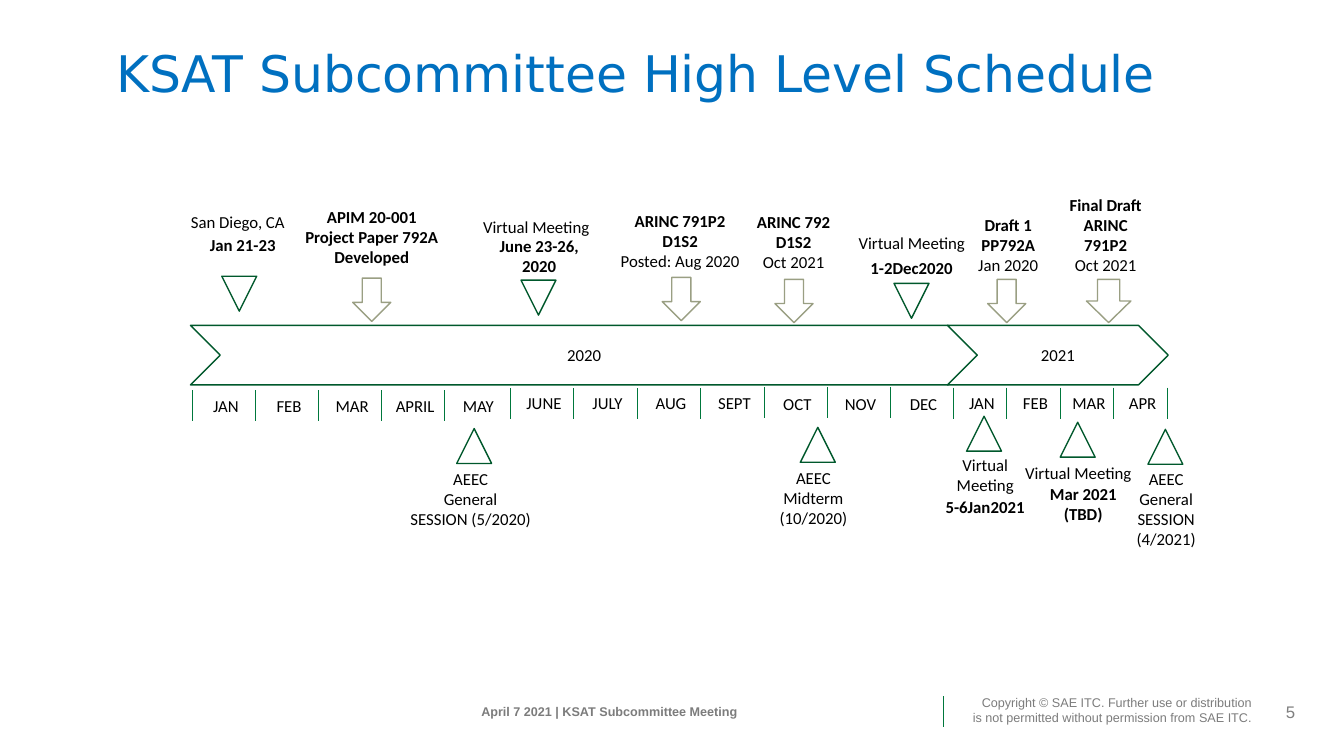
from pptx import Presentation
from pptx.dml.color import RGBColor
from pptx.enum import shapes, text
from pptx.oxml import ns
from pptx.util import Cm, Pt
from lxml import etree

GREEN, OLIVE, GREY = "00582C", "9A9F83", "7C7C7C"
KIND = shapes.MSO_SHAPE
ALIGN = text.PP_ALIGN

BANDS = [
    (4.85, 1.59, 9.83, 9.85, "JAN FEB MAR APRIL MAY"),
    (12.86, 1.6, 9.78, 9.78, "JUNE JULY AUG SEPT"),
    (19.25, 1.59, 9.75, 9.8, "OCT NOV DEC"),
    (24.02, 1.35, 9.77, 9.78, "JAN FEB MAR APR"),
]
LABELS = [
    ("San Diego, CA", 0, 4.14, 5.21, 3.71, 0.76),
    ("Jan 21-23", 1, 4.57, 5.79, 3.1, 0.76),
    ("APIM 20-001\nProject Paper 792A\nDeveloped", 3, 7.01, 5.08, 4.72, 1.8),
    ("Virtual Meeting", 0, 11.66, 5.33, 3.71, 0.76),
    ("June 23-26, 2020", 1, 12.04, 5.82, 3.1, 1.27),
    ("ARINC 791P2\nD1S2\nPosted: Aug 2020", 2, 14.78, 5.18, 4.72, 1.8),
    ("ARINC 792 D1S2\nOct 2021", 1, 18.82, 5.21, 2.36, 1.8),
    ("Virtual Meeting", 0, 21.34, 5.74, 3.28, 0.76),
    ("1-2Dec2020", 1, 21.44, 6.38, 3.07, 0.76),
    ("Draft 1\nPP792A\nJan 2020", 2, 24.33, 5.28, 2.16, 1.8),
    ("Final Draft\nARINC 791P2\nOct 2021", 2, 26.52, 4.78, 2.69, 2.31),
    ("AEEC\nGeneral\nSESSION (5/2020)", 0, 9.83, 11.68, 4.06, 1.8),
    ("AEEC\nMidterm\n(10/2020)", 0, 18.47, 11.66, 4.06, 1.8),
    ("Virtual\nMeeting", 0, 23.19, 11.33, 3.28, 1.75),
    ("5-6Jan2021", 1, 23.29, 12.4, 3.07, 1.07),
    ("Virtual Meeting", 0, 25.32, 11.53, 3.71, 0.76),
    ("Mar 2021\n(TBD)", 2, 25.88, 12.07, 2.84, 1.8),
    ("AEEC\nGeneral\nSESSION\n(4/2021)", 0, 27.36, 11.68, 4.06, 2.31),
]
PAST = [(5.59, 6.96), (13.13, 7.06), (22.53, 7.14)]
NEXT = [(11.51, 10.8), (20.17, 10.77), (24.36, 10.49),
        (26.72, 10.64), (28.93, 10.82)]
DRAFTS = [(8.89, 7.01, 0.96), (16.69, 6.99, 0.96), (19.53, 7.04, 0.96),
          (24.89, 7.04, 0.96), (27.38, 7.04, 1.12)]


def paint(item, color):
    """Set the colour of a font, fill or line colour format."""
    item.rgb = RGBColor.from_string(color)


def style(frame, words, font="Calibri", size=12, color="000000", bold=0,
          align=ALIGN.CENTER):
    """Fill a text frame, with its first paragraphs bold."""
    frame.text = words
    for n, para in enumerate(frame.paragraphs):
        para.alignment = align
        for run in para.runs:
            run.font.name = font
            run.font.size = Pt(size)
            run.font.bold = n < bold
            paint(run.font.color, color)


def label(slide, words, bold, x, y, w, h, inset=True, wrap=True, **look):
    """Add a text box and return its frame."""
    frame = slide.shapes.add_textbox(Cm(x), Cm(y), Cm(w), Cm(h)).text_frame
    frame.word_wrap = wrap
    if not inset:
        frame.margin_left = frame.margin_right = 0
        frame.margin_top = frame.margin_bottom = 0
    style(frame, words, bold=bold, **look)
    return frame


def mark(slide, kind, x, y, w, h, color=GREEN, turn=0):
    """Add an unfilled, outlined shape."""
    shape = slide.shapes.add_shape(kind, Cm(x), Cm(y), Cm(w), Cm(h))
    shape.shadow.inherit = False
    shape.fill.background()
    paint(shape.line.color, color)
    shape.line.width = Pt(1)
    shape.rotation = turn
    return shape


def year(slide, name, x, w):
    """Add a chevron that spans one year."""
    shape = mark(slide, KIND.CHEVRON, x, 8.2, w, 1.5)
    shape.fill.solid()
    paint(shape.fill.fore_color, "FFFFFF")
    style(shape.text_frame, name)
    shape.text_frame.vertical_anchor = text.MSO_ANCHOR.MIDDLE


def tick(slide, x, y):
    """Add a short upright line."""
    line = slide.shapes.add_connector(
        shapes.MSO_CONNECTOR.STRAIGHT, Cm(x), Cm(y), Cm(x), Cm(y + 0.78))
    paint(line.line.color, "00773C")
    line.line.width = Pt(0.5)
    etree.SubElement(line._element.spPr, ns.qn("a:effectLst"))


def months(slide, start, step, top, base, names):
    """Add a run of month names, each with a tick on its left."""
    for n, name in enumerate(names.split()):
        x = start + n * step
        tick(slide, x, top)
        label(slide, name, 0, x, base, step + 0.1, 0.76)


def footer(slide):
    """Add the date, copyright and page number."""
    look = dict(inset=False, font="Arial")
    label(slide, "April 7 2021 | KSAT Subcommittee Meeting", 1,
          10.21, 17.75, 10.29, 0.38, size=9, color=GREY, **look)
    tick(slide, 23.77, 17.55)
    label(slide, "Copyright © SAE ITC. Further use or distribution\v"
          "is not permitted without permission from SAE ITC.", 0,
          24.1, 17.5, 7.44, 0.76, size=9, color=GREY,
          align=ALIGN.RIGHT, **look)
    label(slide, "5", 0, 32.11, 17.68, 0.53, 0.51, wrap=False,
          color="808080", align=ALIGN.RIGHT, **look)


def main():
    """Build the schedule slide."""
    deck = Presentation()
    deck.slide_width, deck.slide_height = Cm(33.87), Cm(19.05)
    slide = deck.slides.add_slide(deck.slide_layouts[6])
    title = label(slide, "KSAT Subcommittee High Level Schedule", 0,
                  2.01, 0.58, 28.04, 2.69, font="DejaVu Sans", size=36,
                  color="0070C0")
    title.vertical_anchor = text.MSO_ANCHOR.MIDDLE
    title.paragraphs[0].line_spacing = 0.9
    year(slide, "2020", 4.8, 19.84)
    year(slide, "2021", 23.88, 5.56)
    for band in BANDS:
        months(slide, *band)
    tick(slide, 29.42, 9.77)
    for item in LABELS:
        label(slide, *item)
    for turn, spots in ((180, PAST), (0, NEXT)):
        for x, y in spots:
            mark(slide, KIND.ISOSCELES_TRIANGLE, x, y, 0.88, 0.88, turn=turn)
    for x, y, w in DRAFTS:
        mark(slide, KIND.DOWN_ARROW, x, y, w, 1.09, OLIVE)
    footer(slide)
    deck.save("out.pptx")


if __name__ == "__main__":
    main()
